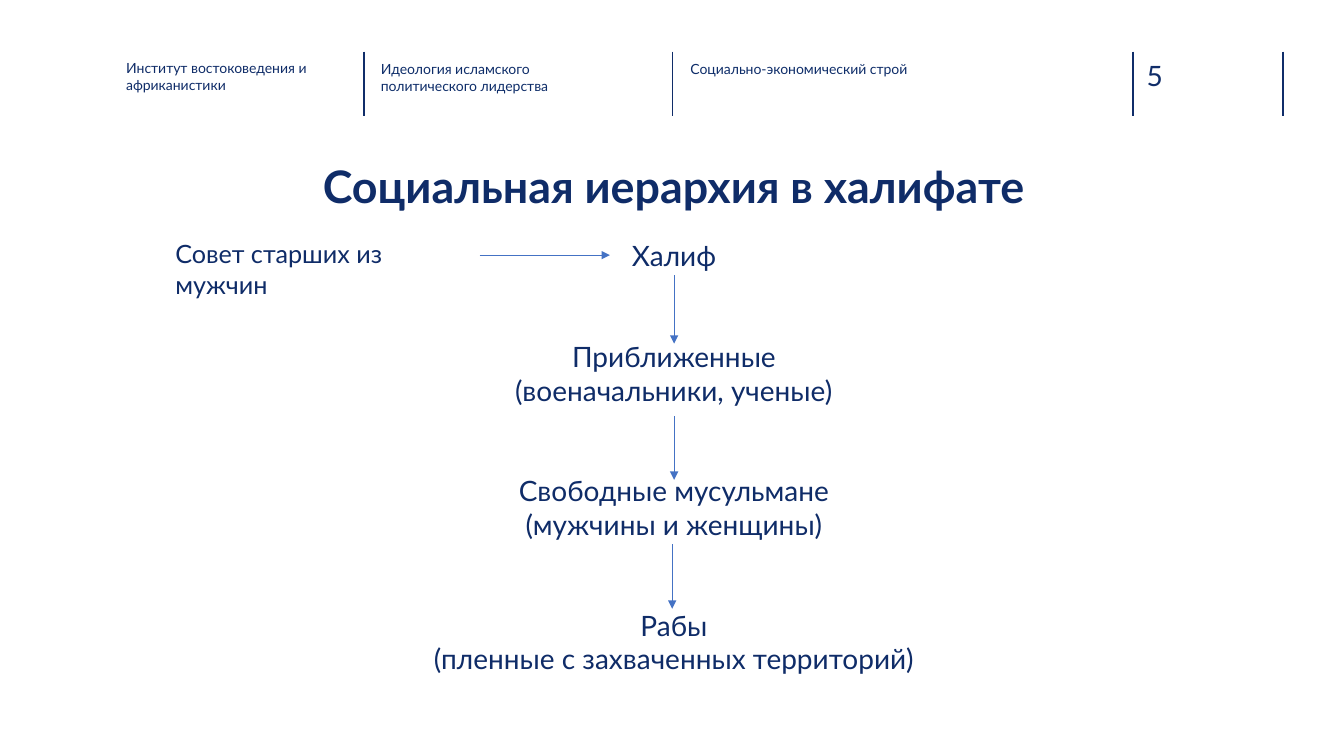
from dataclasses import dataclass

from lxml import etree
from pptx import Presentation
from pptx.dml.color import RGBColor
from pptx.enum.shapes import MSO_CONNECTOR
from pptx.enum.text import MSO_ANCHOR, PP_ALIGN
from pptx.oxml.ns import qn
from pptx.util import Cm, Pt

STRAIGHT = MSO_CONNECTOR.STRAIGHT
TOP = MSO_ANCHOR.TOP
LEFT, CENTER = PP_ALIGN.LEFT, PP_ALIGN.CENTER


@dataclass(frozen=True)
class Theme:
    """Hold the colours, font and type sizes of the slide."""

    font: str = "Lato"
    text: str = "0F2C68"
    caption: str = "0E2D69"
    rule: str = "102D69"
    arrow: str = "4472C4"
    title_size: int = 32
    level_size: int = 20
    side_size: int = 18
    caption_size: int = 10


THEME = Theme()
RULE_XS = (9.17, 16.94, 28.55, 32.33)
RULE_TOP, RULE_BOTTOM = 1.3, 2.92
CAPTIONS = (
    ("Институт востоковедения и африканистики", 3.18, 1.5, 5.28, THEME.text),
    ("Идеология исламского политического лидерства", 9.6, 1.52, 5.74, THEME.caption),
    ("Социально-экономический строй", 17.4, 1.52, 5.74, THEME.caption),
)
LEVELS = (
    "Халиф",
    "Приближенные\n(военачальники, ученые)",
    "Свободные мусульмане\n(мужчины и женщины)",
    "Рабы\n(пленные с захваченных территорий)",
)
LEVEL_GAP = 48
ARROWS = (
    (12.09, 6.43, 15.37, 6.43),
    (16.99, 6.93, 16.99, 8.66),
    (16.99, 10.49, 16.99, 12.09),
    (16.94, 13.72, 16.94, 15.34),
)


def add_text(s, paragraphs, box, size, color=THEME.text, align=LEFT,
             bold=False, inset=True, gap=0):
    """Add a wrapped text box with one style for all its paragraphs."""
    tf = s.shapes.add_textbox(*(Cm(v) for v in box)).text_frame
    tf.word_wrap = True
    tf.vertical_anchor = TOP
    if not inset:
        tf.margin_left = tf.margin_right = tf.margin_top = tf.margin_bottom = 0
    for i, text in enumerate(paragraphs):
        p = tf.add_paragraph() if i else tf.paragraphs[0]
        p.text = text
        p.alignment = align
        if i and gap:
            p.space_before = Pt(gap)
        for r in p.runs:
            r.font.name = THEME.font
            r.font.size = Pt(size)
            r.font.bold = bold
            r.font.color.rgb = RGBColor.from_string(color)


def add_line(s, ends, color, width, arrow=False):
    """Add a straight line, with an arrowhead at its end if asked."""
    c = s.shapes.add_connector(STRAIGHT, *(Cm(v) for v in ends))
    c.line.color.rgb = RGBColor.from_string(color)
    c.line.width = Pt(width)
    if arrow:
        etree.SubElement(c.line._get_or_add_ln(), qn("a:tailEnd"), type="triangle")
    etree.SubElement(c._element.spPr, qn("a:effectLst"))


def add_header(s):
    """Add the rules, the captions and the page number."""
    for x in RULE_XS:
        add_line(s, (x, RULE_TOP, x, RULE_BOTTOM), THEME.rule, 1)
    for text, left, top, width, color in CAPTIONS:
        add_text(s, [text], (left, top, width, 1.14), THEME.caption_size,
                 color, inset=False)
    add_text(s, ["5"], (28.9, 1.47, 1.85, 0.86), THEME.level_size,
             THEME.rule, inset=False)


def add_hierarchy(s):
    """Add the levels of society, the council and the arrows."""
    add_text(s, LEVELS, (10.57, 5.89, 12.83, 11.38), THEME.level_size,
             align=CENTER, gap=LEVEL_GAP)
    add_text(s, ["Совет старших из мужчин"], (4.17, 5.89, 7.54, 1.02),
             THEME.side_size)
    for ends in ARROWS:
        add_line(s, ends, THEME.arrow, 0.5, arrow=True)


def main():
    """Build the slide and save it."""
    prs = Presentation()
    prs.slide_width, prs.slide_height = Cm(33.87), Cm(19.05)
    s = prs.slides.add_slide(prs.slide_layouts[6])
    add_header(s)
    add_text(s, ["Социальная иерархия в халифате"], (1.63, 4.01, 30.71, 2.16),
             THEME.title_size, align=CENTER, bold=True, inset=False)
    add_hierarchy(s)
    prs.save("out.pptx")


if __name__ == "__main__":
    main()
